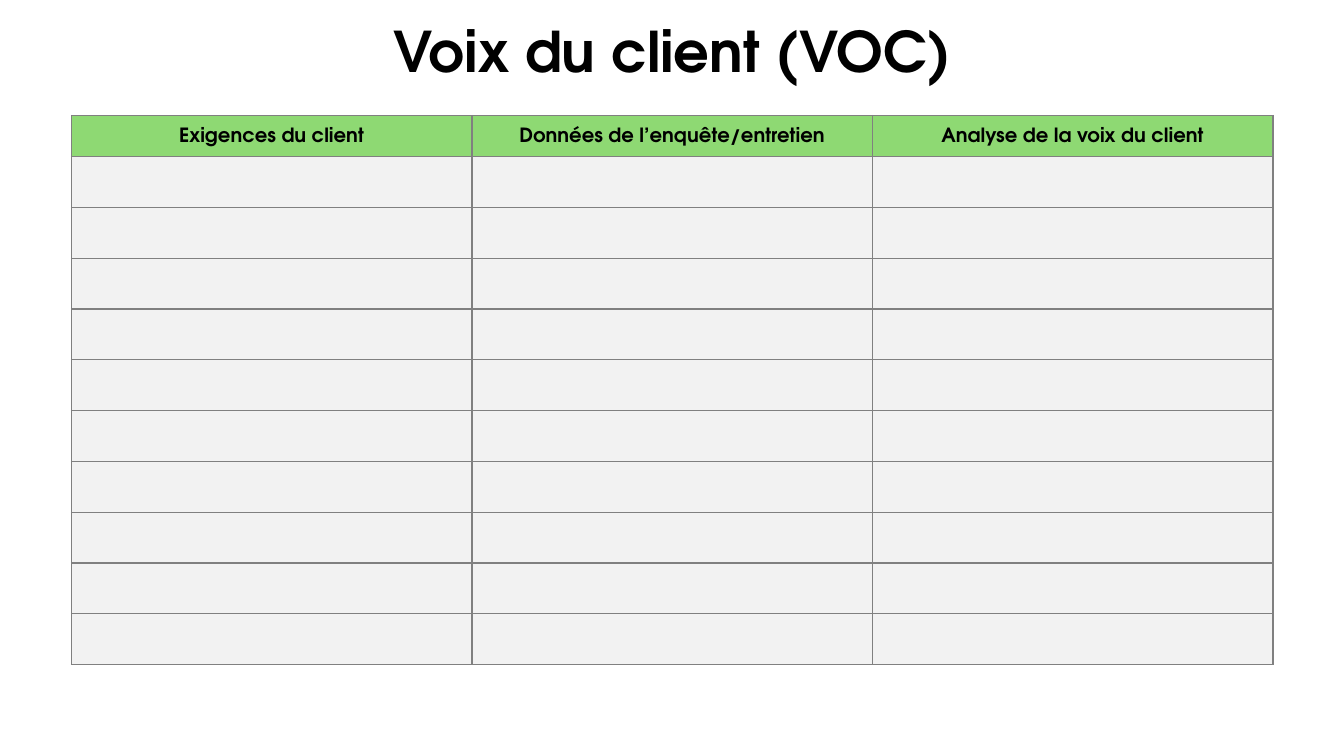
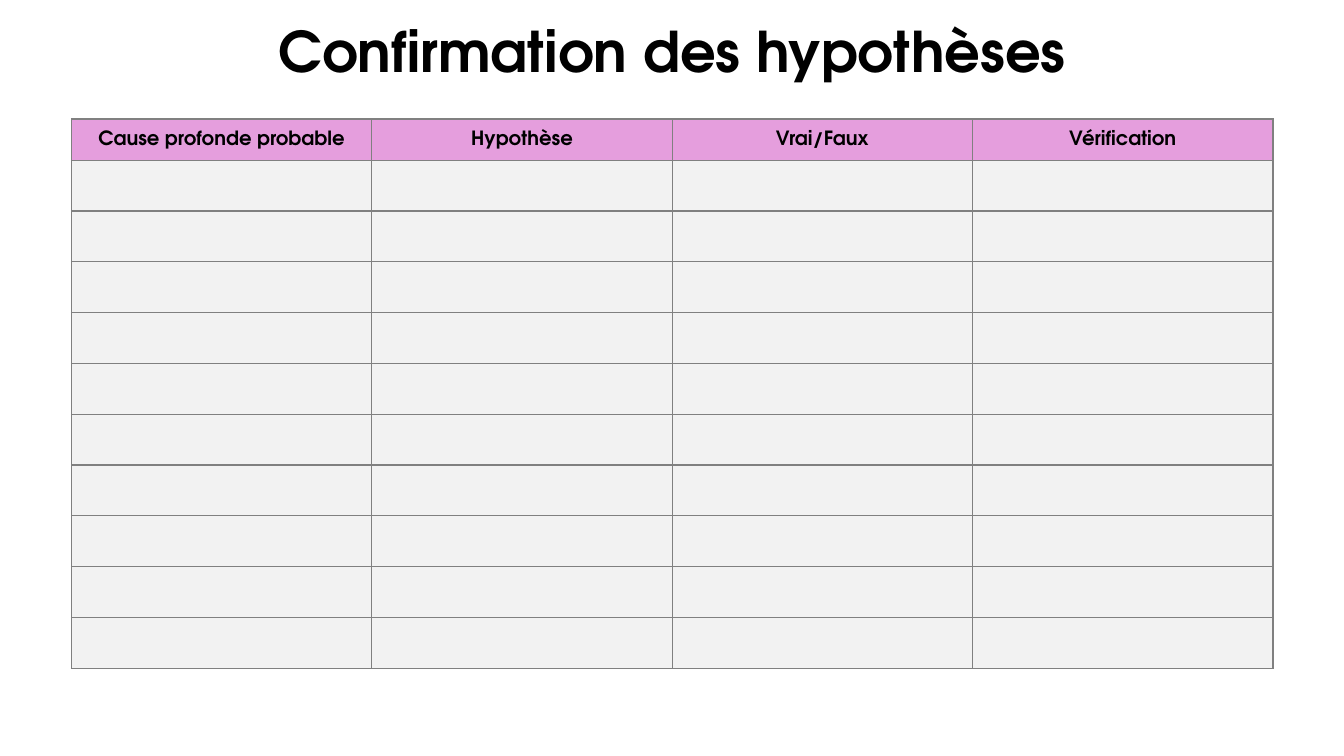
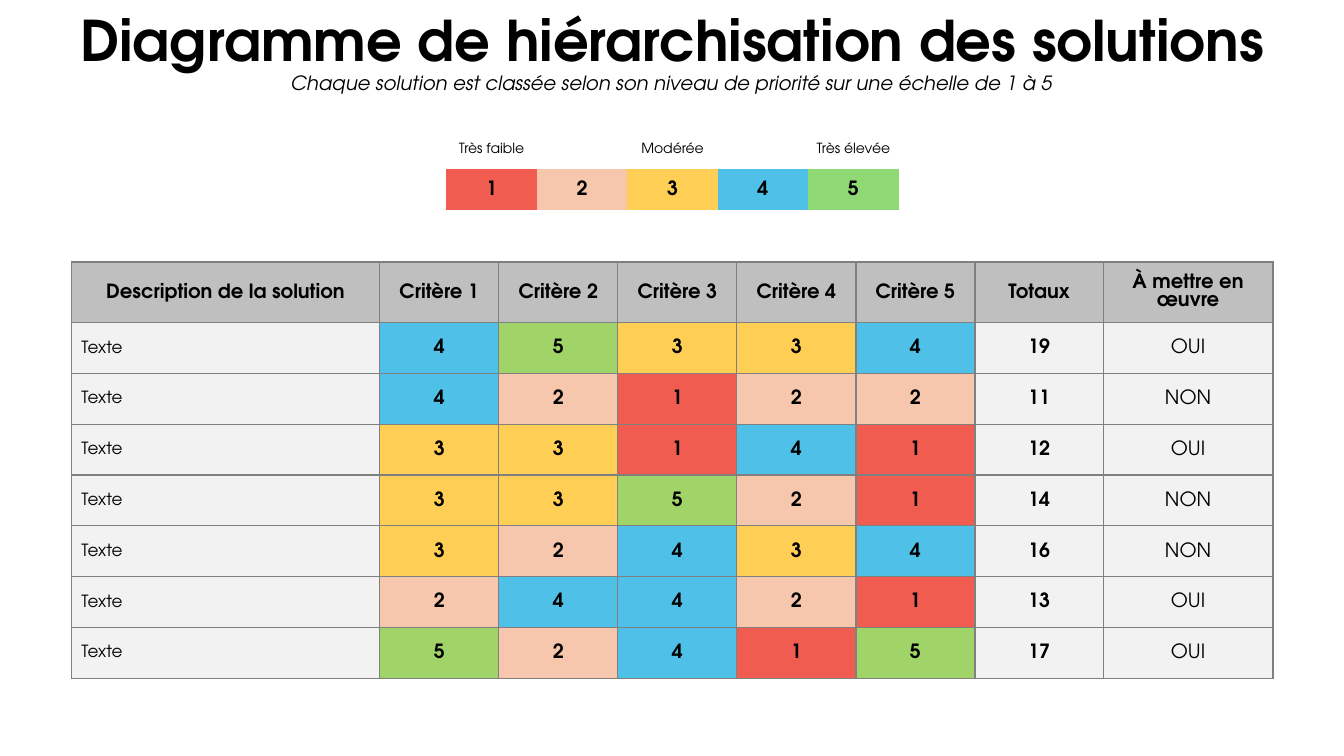
import pptx
import pptx.dml.color
import pptx.enum.text
import pptx.oxml
import pptx.oxml.ns
import pptx.util
from pptx.dml.color import RGBColor
from pptx.util import Cm

FONT = "TeX Gyre Adventor"
BLACK = RGBColor(0x00, 0x00, 0x00)
LIGHT_GREY = RGBColor(0xF2, 0xF2, 0xF2)
HEADER_GREY = RGBColor(0xBF, 0xBF, 0xBF)
BORDER_GREY = RGBColor(0x80, 0x80, 0x80)
GREEN = RGBColor(0x8E, 0xD9, 0x73)
PINK = RGBColor(0xE5, 0x9E, 0xDD)
SCORE_COLORS = {
    1: RGBColor(0xF0, 0x5C, 0x4F),
    2: RGBColor(0xF6, 0xC6, 0xAD),
    3: RGBColor(0xFF, 0xCE, 0x54),
    4: RGBColor(0x4F, 0xC1, 0xE8),
    5: RGBColor(0xA0, 0xD4, 0x68),
}

SLIDE_WIDTH, SLIDE_HEIGHT = 33.87, 19.05
TABLE_LEFT, TABLE_WIDTH = 1.8, 30.28
HEADER_HEIGHT, ROW_HEIGHT = 1, 1.28
EMPTY_ROWS = 10
NO_STYLE = "{2D5ABB26-0587-4C30-8999-92F81FD0307C}"
CENTER = pptx.enum.text.PP_ALIGN.CENTER
LEFT = pptx.enum.text.PP_ALIGN.LEFT
MIDDLE = pptx.enum.text.MSO_ANCHOR.MIDDLE

SCORES = [
    (4, 5, 3, 3, 4),
    (4, 2, 1, 2, 2),
    (3, 3, 1, 4, 1),
    (3, 3, 5, 2, 1),
    (3, 2, 4, 3, 4),
    (2, 4, 4, 2, 1),
    (5, 2, 4, 1, 5),
]
DECISIONS = ["OUI", "NON", "OUI", "NON", "NON", "OUI", "OUI"]


def format_run(run, size, bold=False, italic=False):
    """Apply the shared font to a run."""
    run.font.name = FONT
    run.font.size = pptx.util.Pt(size)
    run.font.bold = bold
    run.font.italic = italic
    run.font.color.rgb = BLACK


def add_title(slide, width, title, subtitle=None):
    """Add a title centred at the top, with an optional italic subtitle line."""
    shape = slide.shapes.add_textbox(Cm((SLIDE_WIDTH - width) / 2), 0, Cm(width), Cm(2.74))
    frame = shape.text_frame
    frame.word_wrap = True
    frame.vertical_anchor = MIDDLE
    paragraph = frame.paragraphs[0]
    paragraph.text = f"{title}\v{subtitle}" if subtitle else title
    paragraph.alignment = CENTER
    paragraph.line_spacing = 0.9
    format_run(paragraph.runs[0], 40, bold=True)
    for run in paragraph.runs[1:]:
        format_run(run, 14, italic=True)


def add_grid(slide, left, top, column_widths, row_heights):
    """Add an unstyled table with the given column widths and row heights."""
    shape = slide.shapes.add_table(
        len(row_heights), len(column_widths),
        Cm(left), Cm(top), Cm(sum(column_widths)), Cm(sum(row_heights)))
    table = shape.table
    table.first_row = table.horz_banding = False
    table._tbl.tblPr.find(pptx.oxml.ns.qn("a:tableStyleId")).text = NO_STYLE
    for column, width in zip(table.columns, column_widths):
        column.width = Cm(width)
    for row, height in zip(table.rows, row_heights):
        row.height = Cm(height)
    return table


def add_borders(cell):
    """Draw a one-point grey line on each side of a cell."""
    properties = cell._tc.get_or_add_tcPr()
    for side in ("lnL", "lnR", "lnT", "lnB"):
        properties.append(pptx.oxml.parse_xml(
            f'<a:{side} {pptx.oxml.ns.nsdecls("a")} w="12700"><a:solidFill>'
            f'<a:srgbClr val="{BORDER_GREY}"/></a:solidFill></a:{side}>'))


def fill_cell(cell, text="", color=None, size=14, bold=True, alignment=CENTER,
              spacing=1.07, side_margin=0.25, bordered=True):
    """Set the borders, fill and text of a cell."""
    if bordered:
        add_borders(cell)
    if color is None:
        cell.fill.background()
    else:
        cell.fill.solid()
        cell.fill.fore_color.rgb = color
    cell.vertical_anchor = MIDDLE
    cell.margin_left = cell.margin_right = Cm(side_margin)
    cell.margin_top = cell.margin_bottom = Cm(0.2 if text else 0)
    if text:
        paragraph = cell.text_frame.paragraphs[0]
        paragraph.text = text
        paragraph.alignment = alignment
        paragraph.line_spacing = spacing
        format_run(paragraph.runs[0], size, bold)


def add_blank_form(slide, top, headers, header_color):
    """Add a table with equal columns, a coloured header and empty rows."""
    widths = [TABLE_WIDTH / len(headers)] * len(headers)
    heights = [HEADER_HEIGHT] + [ROW_HEIGHT] * EMPTY_ROWS
    table = add_grid(slide, TABLE_LEFT, top, widths, heights)
    for column, header in enumerate(headers):
        fill_cell(table.cell(0, column), header, header_color)
        for row in range(1, EMPTY_ROWS + 1):
            fill_cell(table.cell(row, column), color=LIGHT_GREY)


def add_score_table(slide, top):
    """Add the table of solutions with scores, totals and decisions."""
    criteria = [f"Critère {number}" for number in range(1, 6)]
    headers = ["Description de la solution", *criteria, "Totaux", "À mettre en œuvre"]
    widths = [7.77] + [3] * len(criteria) + [3.23, 4.28]
    table = add_grid(slide, TABLE_LEFT, top, widths, [1.38] + [ROW_HEIGHT] * len(SCORES))
    for column, header in enumerate(headers):
        spacing = 0.95 if header == headers[-1] else 1.07
        fill_cell(table.cell(0, column), header, HEADER_GREY, spacing=spacing)
    for row, (scores, decision) in enumerate(zip(SCORES, DECISIONS), start=1):
        fill_cell(table.cell(row, 0), "Texte", LIGHT_GREY, size=12, bold=False, alignment=LEFT)
        for column, score in enumerate(scores, start=1):
            fill_cell(table.cell(row, column), str(score), SCORE_COLORS[score])
        fill_cell(table.cell(row, 6), str(sum(scores)), LIGHT_GREY)
        fill_cell(table.cell(row, 7), decision, LIGHT_GREY, bold=False)


def add_scale(slide, left, top):
    """Add the scale from 1 to 5 with its captions."""
    captions = ["Très faible", "", "Modérée", "", "Très élevée"]
    colors = [*list(SCORE_COLORS.values())[:4], GREEN]
    table = add_grid(slide, left, top, [2.28] * len(captions), [0.98] * 2)
    for column, (caption, color) in enumerate(zip(captions, colors)):
        fill_cell(table.cell(0, column), caption, size=10, bold=False,
                  side_margin=0.1, bordered=False)
        fill_cell(table.cell(1, column), str(column + 1), color, bordered=False)


def main():
    """Build and save the presentation."""
    presentation = pptx.Presentation()
    presentation.slide_width = Cm(SLIDE_WIDTH)
    presentation.slide_height = Cm(SLIDE_HEIGHT)
    blank_layout = presentation.slide_layouts[6]

    slide = presentation.slides.add_slide(blank_layout)
    add_title(slide, 22, "Voix du client (VOC)")
    add_blank_form(slide, 2.91, [
        "Exigences du client", "Données de l’enquête/entretien",
        "Analyse de la voix du client"], GREEN)

    slide = presentation.slides.add_slide(blank_layout)
    add_title(slide, 22, "Confirmation des hypothèses")
    add_blank_form(slide, 3, [
        "Cause profonde probable", "Hypothèse", "Vrai/Faux", "Vérification"], PINK)

    slide = presentation.slides.add_slide(blank_layout)
    add_title(slide, 31.3, "Diagramme de hiérarchisation des solutions",
              "Chaque solution est classée selon son niveau de priorité sur une échelle de 1 à 5")
    add_score_table(slide, 6.6)
    add_scale(slide, 11.25, 3.28)

    presentation.save("out.pptx")


if __name__ == "__main__":
    main()
